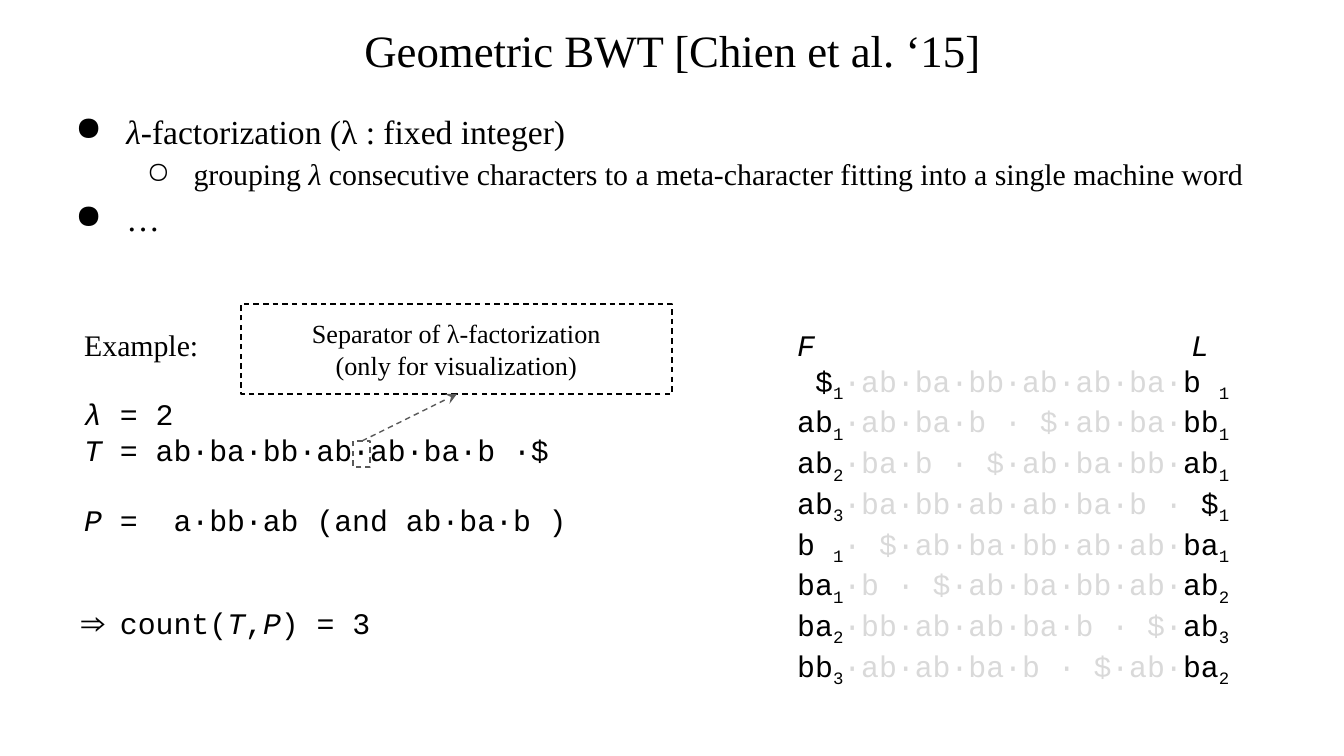
from dataclasses import dataclass
from typing import Optional

from lxml import etree
from pptx import Presentation, util as u
from pptx.dml import color
from pptx.enum import dml, shapes, text
from pptx.oxml import ns

SCALE = 914400 / 134.4  # EMU in one px
HEX = {"ink": "000000", "pale": "D9D9D9", "line": "595959"}
SERIF, MONO = "Times New Roman", "Courier New"
LINE = 18.1  # height of one monospaced line, pt


@dataclass
class Run:
    text: str
    ital: bool = False
    hue: str = "ink"
    sub: bool = False


@dataclass
class Para:
    runs: list[Run]
    size: int = 16
    font: str = MONO
    mid: bool = False
    gap: float = 0  # empty lines above
    mark: str = ""
    level: int = 0
    tab: int = 0


@dataclass
class Box:
    left: int
    top: int
    wide: int
    high: int


def px(num: float) -> u.Emu:
    return u.Emu(round(num * SCALE))


def rgb(name: str) -> color.RGBColor:
    return color.RGBColor.from_string(HEX[name])


def child(node, tag: str, **attrs: str):
    return etree.SubElement(node, ns.qn(tag), attrs)


def dash(line, hue: str) -> None:
    line.color.rgb = rgb(hue)
    line.width = u.Pt(0.75)
    line.dash_style = dml.MSO_LINE.DASH


def bullet(para, mark: str, level: int) -> None:
    para.level = level
    para.line_spacing = 1.15
    props = para._p.get_or_add_pPr()
    props.set("marL", str(u.Inches(0.5 + 0.5 * level)))
    props.set("indent", str(-u.Inches(0.35 if level else 0.38)))
    child(child(props, "a:buClr"), "a:srgbClr", val=HEX["ink"])
    child(props, "a:buChar", char=mark)


def write(frame, paras: list[Para], grow: bool = False) -> None:
    frame.word_wrap = True
    frame.margin_left = frame.margin_right = u.Inches(0.1)
    frame.margin_top = frame.margin_bottom = u.Inches(0.1)
    if grow:
        frame.auto_size = text.MSO_AUTO_SIZE.SHAPE_TO_FIT_TEXT
    for pos, item in enumerate(paras):
        para = frame.add_paragraph() if pos else frame.paragraphs[0]
        para.alignment = text.PP_ALIGN.CENTER if item.mid else text.PP_ALIGN.LEFT
        if item.gap:
            para.space_before = u.Pt(item.gap * LINE)
        if item.mark:
            bullet(para, item.mark, item.level)
        if item.tab:
            tabs = child(para._p.get_or_add_pPr(), "a:tabLst")
            child(tabs, "a:tab", pos=str(px(item.tab)), algn="l")
        for part in item.runs:
            run = para.add_run()
            run.text = part.text
            run.font.name, run.font.size = item.font, u.Pt(item.size)
            run.font.italic = part.ital
            run.font.color.rgb = rgb(part.hue)
            if part.sub:
                run.font._element.set("baseline", "-25000")


def label(slide, box: Box, paras: list[Para], grow: bool = False) -> None:
    shape = slide.shapes.add_textbox(
        px(box.left), px(box.top), px(box.wide), px(box.high))
    write(shape.text_frame, paras, grow)


def frame(slide, box: Box, hue: str, paras: Optional[list[Para]] = None) -> None:
    shape = slide.shapes.add_shape(
        shapes.MSO_SHAPE.RECTANGLE,
        px(box.left), px(box.top), px(box.wide), px(box.high))
    shape.shadow.inherit = False
    shape.fill.background()
    dash(shape.line, hue)
    if paras:
        write(shape.text_frame, paras, True)


def arrow(slide, start: tuple[int, int], end: tuple[int, int]) -> None:
    link = slide.shapes.add_connector(
        shapes.MSO_CONNECTOR.STRAIGHT, *map(px, start + end))
    dash(link.line, "line")
    child(link.line._get_or_add_ln(), "a:tailEnd", type="stealth")
    child(link._element.spPr, "a:effectLst")


def row(first: str, rank: str, body: str, last: str, order: str) -> Para:
    return Para([Run(first), Run(rank, sub=True), Run(body, hue="pale"),
                 Run(last), Run(order, sub=True)])


# Sorted rotations: first column, its rank, middle, last column, its rank
ROWS = [
    (" $", "1", "·ab·ba·bb·ab·ab·ba·", "b ", "1"),
    ("ab", "1", "·ab·ba·b · $·ab·ba·", "bb", "1"),
    ("ab", "2", "·ba·b · $·ab·ba·bb·", "ab", "1"),
    ("ab", "3", "·ba·bb·ab·ab·ba·b ·", " $", "1"),
    ("b ", "1", "· $·ab·ba·bb·ab·ab·", "ba", "1"),
    ("ba", "1", "·b · $·ab·ba·bb·ab·", "ab", "2"),
    ("ba", "2", "·bb·ab·ab·ba·b · $·", "ab", "3"),
    ("bb", "3", "·ab·ab·ba·b · $·ab·", "ba", "2"),
]


def main() -> None:
    deck = Presentation()
    deck.slide_width, deck.slide_height = px(1344), px(756)
    slide = deck.slides.add_slide(deck.slide_layouts[6])

    # Bullets and title
    label(slide, Box(46, 91, 1253, 388), [
        Para([Run("λ", True), Run("-factorization (λ : fixed integer)")],
             18, SERIF, mark="●"),
        Para([Run("grouping "), Run("λ ", True),
              Run("consecutive characters to a meta-character "
                  "fitting into a single machine word")],
             16, SERIF, mark="○", level=1),
        Para([Run("…")], 18, SERIF, mark="●"),
    ])
    label(slide, Box(46, 9, 1253, 85), [
        Para([Run("Geometric BWT [Chien et al. ‘15]")], 24, SERIF, True)])

    # Worked example
    label(slide, Box(71, 313, 525, 353), [
        Para([Run("Example:")], font=SERIF),
        Para([Run("λ = ", True), Run("2")], gap=1),
        Para([Run("T", True), Run(" = ab·ba·bb·ab·ab·ba·b ·$")]),
        Para([Run("P", True), Run(" =  a·bb·ab (and ab·ba·b )")], gap=1),
        Para([Run("⇒ count("), Run("T", True), Run(","), Run("P", True),
              Run(") = 3")], gap=2),
    ], True)

    # Rotation matrix
    head = Para([Run("F\tL", True)], tab=394)
    label(slide, Box(784, 313, 462, 353),
          [head] + [row(*item) for item in ROWS], True)

    # Separator note
    frame(slide, Box(353, 441, 17, 26), "line")
    frame(slide, Box(241, 304, 431, 90), "ink", [
        Para([Run(line)], 14, SERIF, True)
        for line in ("Separator of λ-factorization", "(only for visualization)")])
    arrow(slide, (362, 441), (457, 394))

    deck.save("out.pptx")


if __name__ == "__main__":
    main()
